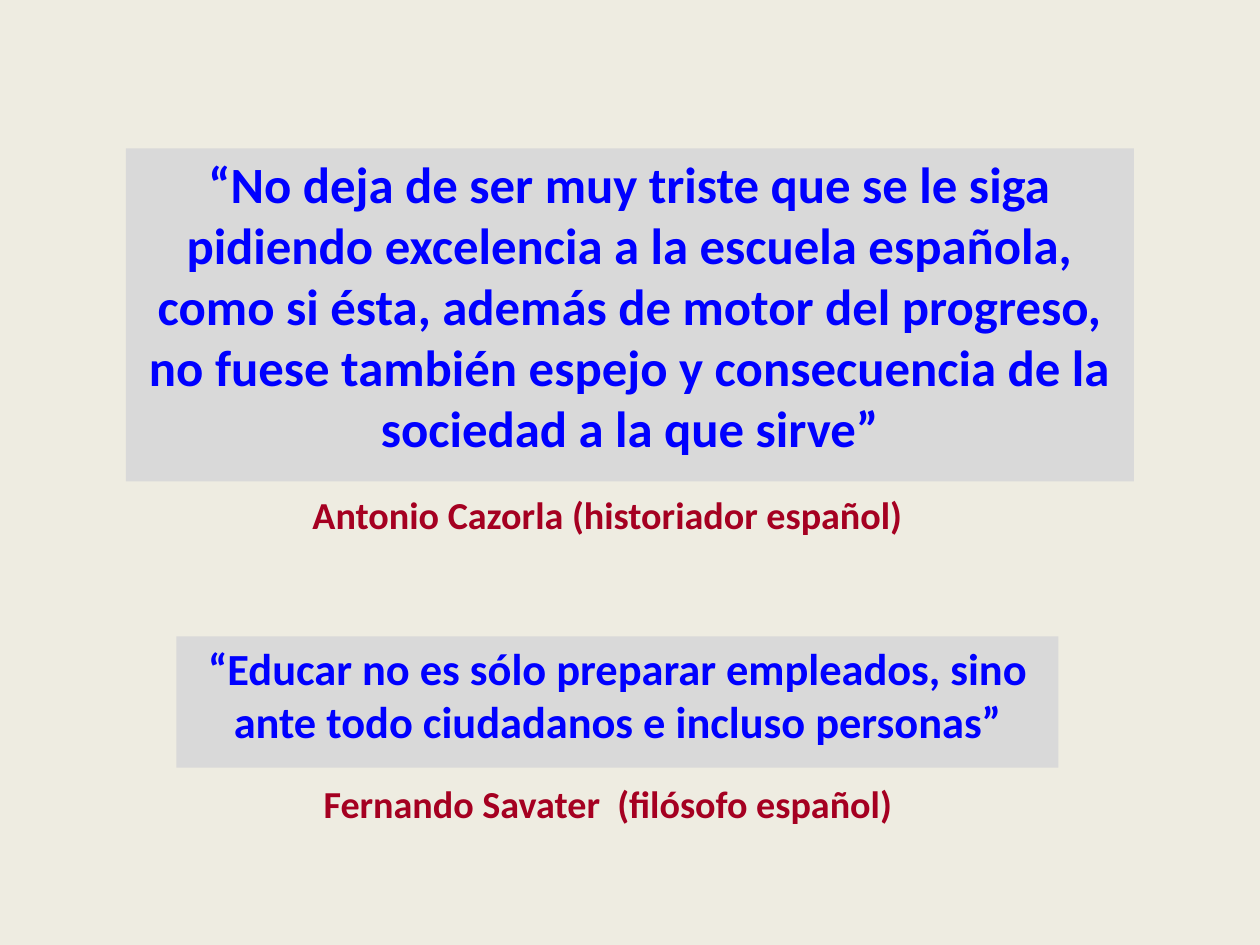
from pptx import Presentation
from pptx.dml.color import RGBColor
from pptx.enum.shapes import MSO_SHAPE as Preset
from pptx.enum.text import MSO_ANCHOR as Anchor, PP_ALIGN as Align
from pptx.util import Cm, Pt

PAPER = "EEECE1"
PANEL = "D9D9D9"
QUOTE_BLUE = "0000FF"
AUTHOR_RED = "A50021"


def paint(color_format, color):
    color_format.rgb = RGBColor.from_string(color)


def fill_solid(fill, color):
    fill.solid()
    paint(fill.fore_color, color)


def write(box, text, size, color, line_spacing=1.0):
    frame = box.text_frame
    frame.text = text
    frame.word_wrap = True
    frame.vertical_anchor = Anchor.TOP
    frame.margin_left = frame.margin_right = Cm(0.2)
    frame.margin_top = frame.margin_bottom = Cm(0.1)
    para = frame.paragraphs[0]
    para.alignment = Align.CENTER
    para.line_spacing = line_spacing
    font = para.runs[0].font
    font.name = "Calibri"
    font.size = Pt(size)
    font.bold = True
    paint(font.color, color)


def add_quote(page, place, text, size):
    panel = page.shapes.add_shape(Preset.RECTANGLE, *map(Cm, place))
    panel.shadow.inherit = False
    fill_solid(panel.fill, PANEL)
    panel.line.fill.background()
    write(panel, text, size, QUOTE_BLUE)


def add_author(page, place, text, line_spacing):
    box = page.shapes.add_textbox(*map(Cm, place))
    write(box, text, 24, AUTHOR_RED, line_spacing)


def main():
    deck = Presentation()
    deck.slide_width, deck.slide_height = Cm(28), Cm(21)
    blank_layout = deck.slide_layouts[6]
    page = deck.slides.add_slide(blank_layout)
    fill_solid(page.background.fill, PAPER)

    add_quote(page, (2.8, 3.3, 22.4, 7.4),
              "“No deja de ser muy triste que se le siga pidiendo excelencia "
              "a la escuela española, como si ésta, además de motor del "
              "progreso, no fuese también espejo y consecuencia de la "
              "sociedad a la que sirve”", 32)
    add_author(page, (6, 11.1, 15, 1.1),
               "Antonio Cazorla (historiador español)", 0.7)

    add_quote(page, (3.92, 14.14, 19.6, 2.92),
              "“Educar no es sólo preparar empleados, sino ante todo "
              "ciudadanos e incluso personas”", 28)
    add_author(page, (5.66, 17.35, 15.7, 1.1),
               "Fernando Savater  (filósofo español)", 0.9)

    deck.save("out.pptx")


if __name__ == "__main__":
    main()
